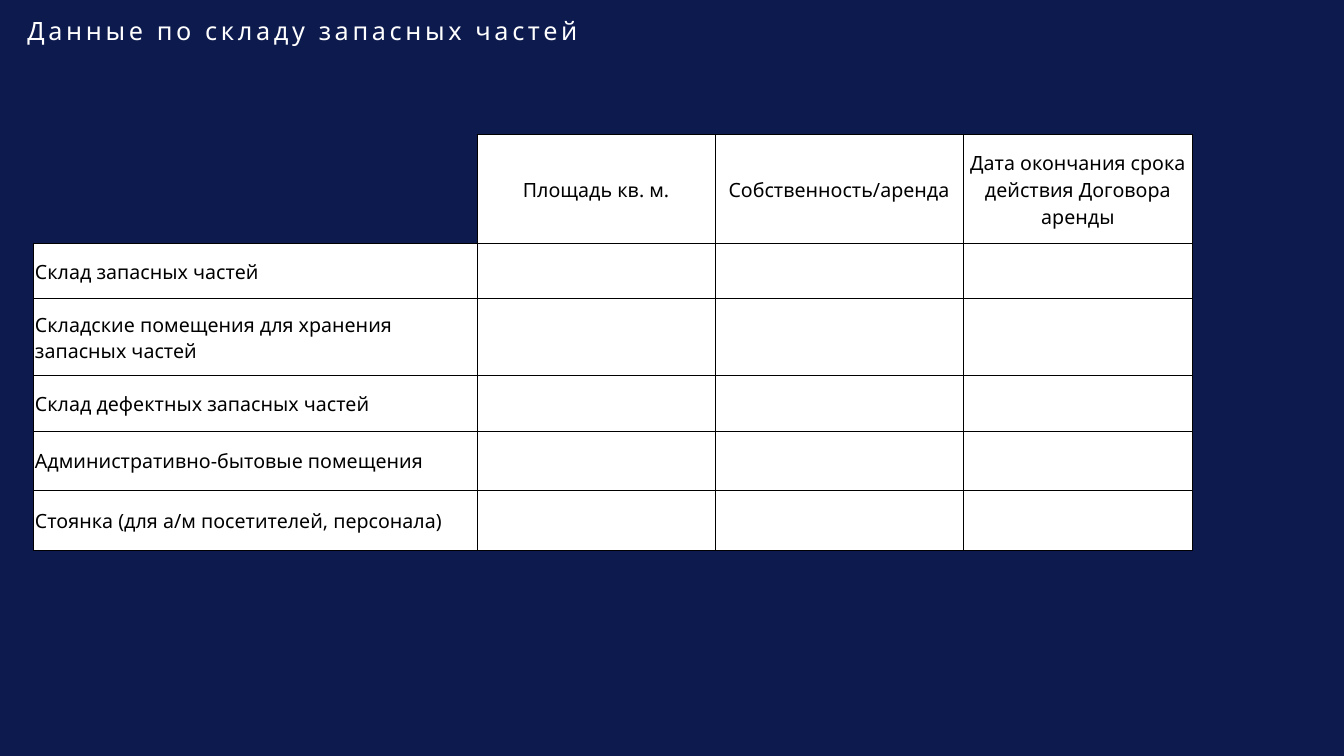
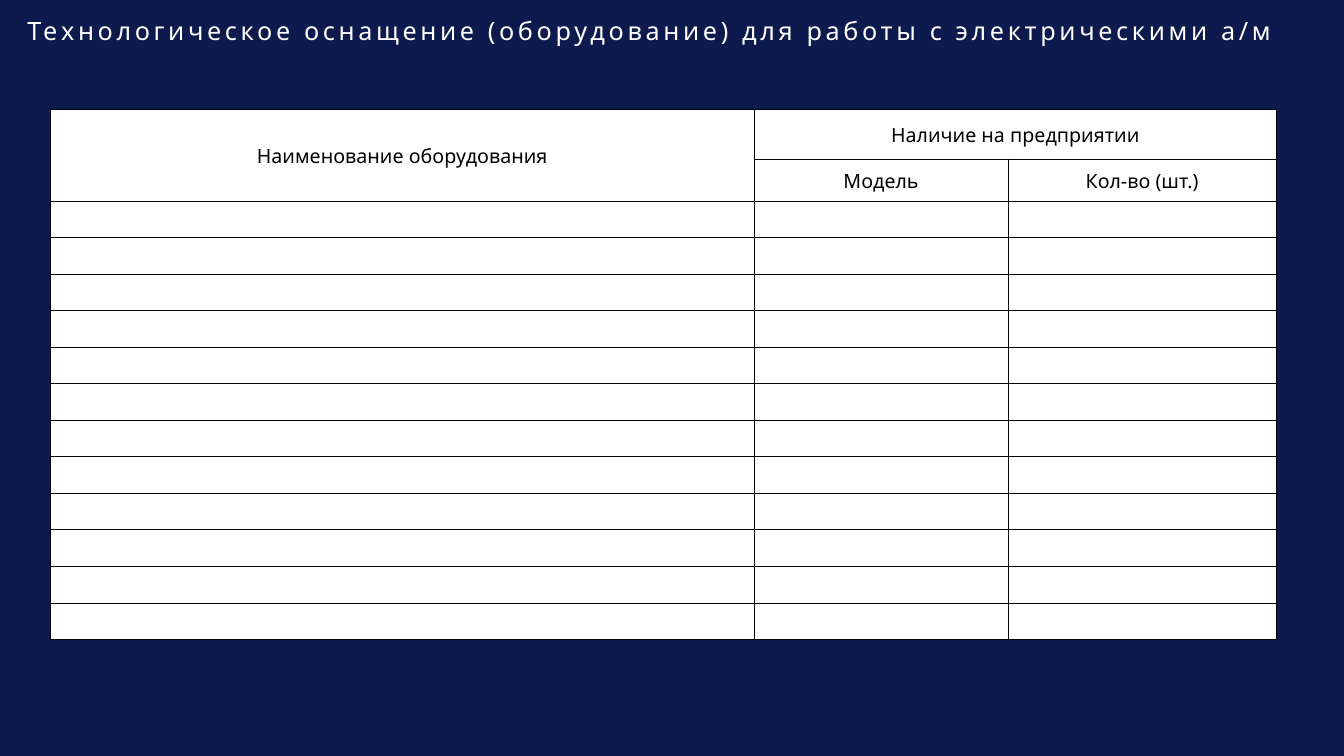
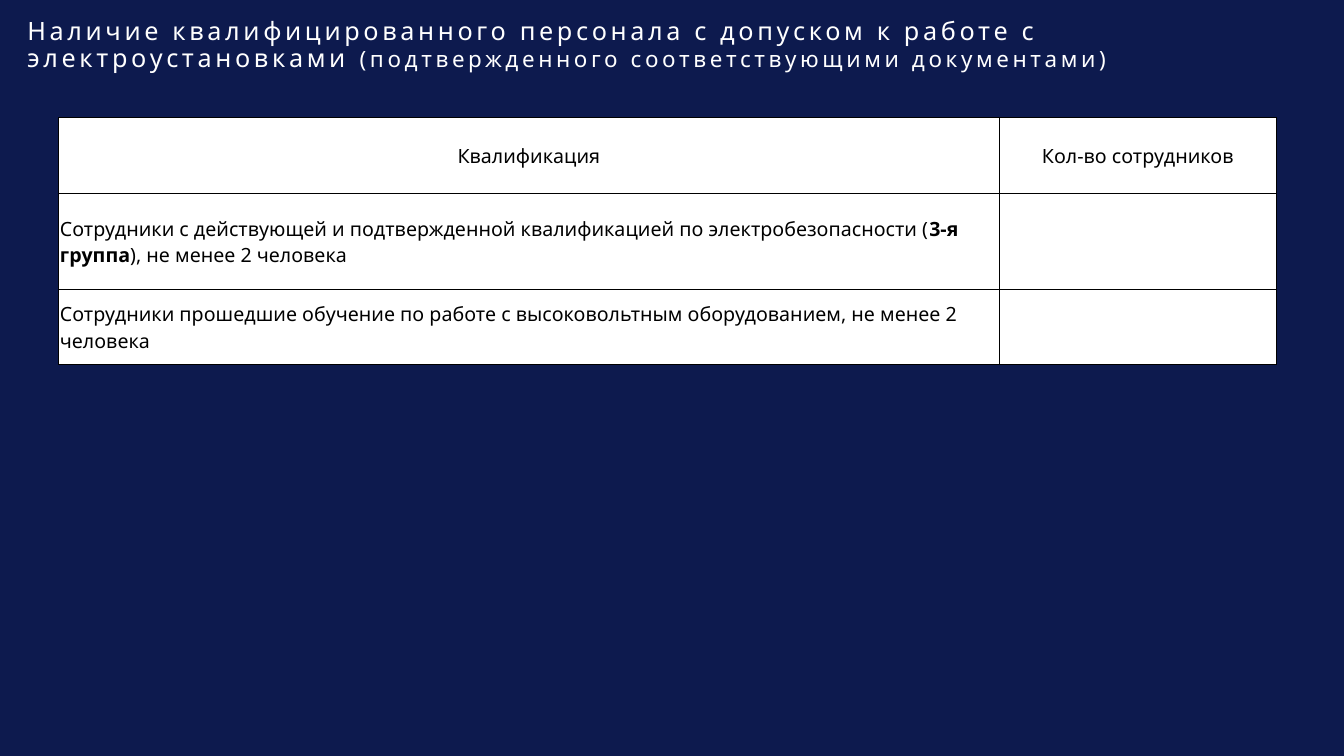
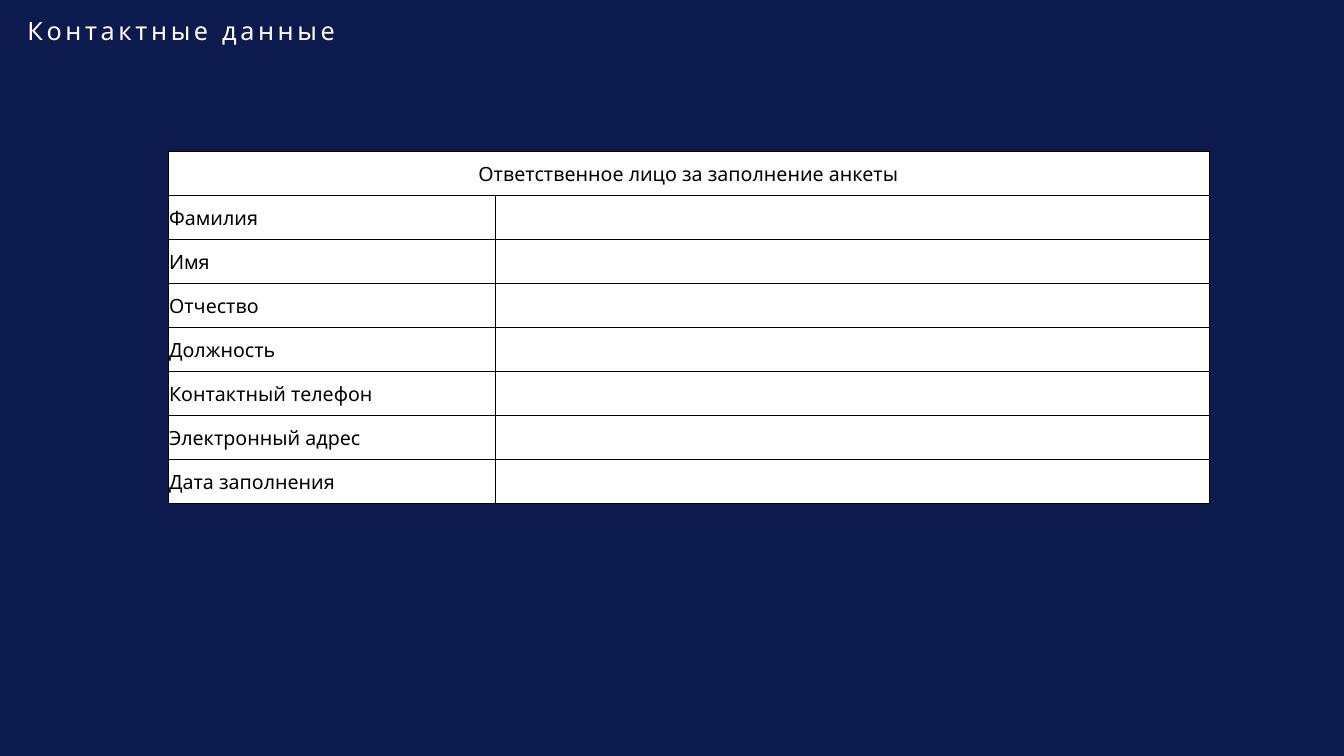
"""Build four questionnaire slides, each a title above a form table."""
from lxml.etree import SubElement
from pptx import Presentation
from pptx.dml.color import RGBColor
from pptx.enum.text import MSO_ANCHOR, MSO_AUTO_SIZE, PP_ALIGN
from pptx.oxml.ns import qn
from pptx.util import Cm, Pt

FONT = "Noto Sans"
NAVY, WHITE, BLACK = "0D1A4E", "FFFFFF", "000000"
BORDER_SIDES = ("a:lnL", "a:lnR", "a:lnT", "a:lnB")
TITLE_SIZES = (18, 16)


def paint(color_format, color):
    color_format.rgb = RGBColor.from_string(color)


def add_run(paragraph, text, size, color, bold=False):
    run = paragraph.add_run()
    run.text = text
    run.font.name = FONT
    run.font.size = Pt(size)
    run.font.bold = bold
    paint(run.font.color, color)
    return run


forms = [
    {
        "title": ["Данные по складу запасных частей"],
        "title_height": 0.82,
        "corner": (0.85, 3.39),
        "columns": [11.18, 5.99, 6.25, 5.79],
        "rows": [2.75, 1.39, 1.94, 1.39, 1.5, 1.5],
        "headers": [
            ["", "Площадь кв. м.", "Собственность/аренда", "Дата окончания срока действия Договора аренды"],
        ],
        "labels": [
            ["Склад запасных частей"],
            ["Складские помещения для хранения запасных частей"],
            ["Склад дефектных запасных частей"],
            ["Административно-бытовые помещения"],
            ["Стоянка (для а/м посетителей, персонала)"],
        ],
        "merges": [],
        "open_corner": True,
    },
    {
        "title": ["Технологическое оснащение (оборудование) для работы с электрическими а/м"],
        "title_height": 0.82,
        "corner": (1.27, 2.75),
        "columns": [17.74, 6.39, 6.77],
        "rows": [1.26, 1.06] + [0.92] * 12,
        "headers": [
            ["Наименование оборудования", "Наличие на предприятии", ""],
            ["", "Модель", "Кол-во (шт.)"],
        ],
        "labels": [],
        "merges": [((0, 0), (1, 0)), ((0, 1), (0, 2))],
        "open_corner": False,
    },
    {
        "title": [
            "Наличие квалифицированного персонала с допуском к работе с электроустановками ",
            "(подтвержденного соответствующими документами)",
        ],
        "title_height": 1.58,
        "corner": (1.48, 2.96),
        "columns": [23.7, 6.99],
        "rows": [1.91, 2.42, 1.88],
        "headers": [["Квалификация", "Кол-во сотрудников"]],
        "labels": [
            [
                "Сотрудники с действующей и подтвержденной квалификацией по электробезопасности (",
                "3-я группа",
                "), не менее 2 человека",
            ],
            ["Сотрудники прошедшие обучение по работе с высоковольтным оборудованием, не менее 2 человека"],
        ],
        "merges": [],
        "open_corner": False,
    },
    {
        "title": ["Контактные данные"],
        "title_height": 0.82,
        "corner": (4.23, 3.81),
        "columns": [8.25, 17.99],
        "rows": [1.11] * 8,
        "headers": [["Ответственное лицо за заполнение анкеты", ""]],
        "labels": [
            ["Фамилия"],
            ["Имя"],
            ["Отчество"],
            ["Должность"],
            ["Контактный телефон"],
            ["Электронный адрес"],
            ["Дата заполнения"],
        ],
        "merges": [((0, 0), (0, 1))],
        "open_corner": False,
    },
]

deck = Presentation()
deck.slide_width, deck.slide_height = Cm(33.87), Cm(19.05)
backdrop = deck.slide_master.background.fill
backdrop.solid()
paint(backdrop.fore_color, NAVY)

for form in forms:
    slide = deck.slides.add_slide(deck.slide_layouts[5])

    title = slide.shapes.title
    title.left, title.top = Cm(0.64), Cm(0.43)
    title.width, title.height = Cm(32.6), Cm(form["title_height"])
    heading = title.text_frame
    heading.word_wrap = True
    heading.auto_size = MSO_AUTO_SIZE.SHAPE_TO_FIT_TEXT
    heading.vertical_anchor = MSO_ANCHOR.TOP
    heading.margin_left, heading.margin_top = Cm(0.05), Cm(0.03)
    heading.margin_right = heading.margin_bottom = 0
    heading_line = heading.paragraphs[0]
    heading_line.alignment = PP_ALIGN.LEFT
    heading_line.line_spacing = 0.9
    for text, size in zip(form["title"], TITLE_SIZES):
        run = add_run(heading_line, text, size, WHITE)
        run.font._element.set("spc", "260")

    left, top = form["corner"]
    columns, rows = form["columns"], form["rows"]
    table = slide.shapes.add_table(
        len(rows), len(columns), Cm(left), Cm(top), Cm(sum(columns)), Cm(sum(rows))
    ).table
    table.first_row = table.horz_banding = False
    for column, width in zip(table.columns, columns):
        column.width = Cm(width)
    for row, height in zip(table.rows, rows):
        row.height = Cm(height)

    header_count = len(form["headers"])
    for r in range(len(rows)):
        for c in range(len(columns)):
            cell = table.cell(r, c)
            cell.vertical_anchor = MSO_ANCHOR.MIDDLE
            cell.margin_left = cell.margin_right = cell.margin_top = Cm(0.03)
            cell.margin_bottom = 0
            is_open = form["open_corner"] and r == c == 0

            for side in BORDER_SIDES:
                border = SubElement(cell._tc.get_or_add_tcPr(), qn(side), w=str(Pt(0.5)))
                if is_open and side in ("a:lnL", "a:lnT"):
                    SubElement(border, qn("a:noFill"))
                else:
                    ink = SubElement(border, qn("a:solidFill"))
                    SubElement(ink, qn("a:srgbClr"), val=BLACK)
            if is_open:
                cell.fill.background()
            else:
                cell.fill.solid()
                paint(cell.fill.fore_color, WHITE)

            pieces = []
            if r < header_count:
                pieces = [form["headers"][r][c]]
            elif c == 0 and form["labels"]:
                pieces = form["labels"][r - header_count]
            line = cell.text_frame.paragraphs[0]
            line.alignment = PP_ALIGN.CENTER if r < header_count else PP_ALIGN.LEFT
            for position, text in enumerate(pieces):
                if text:
                    add_run(line, text, 14, BLACK, bold=position % 2 == 1)

    for first, last in form["merges"]:
        table.cell(*first).merge(table.cell(*last))

deck.save("out.pptx")
